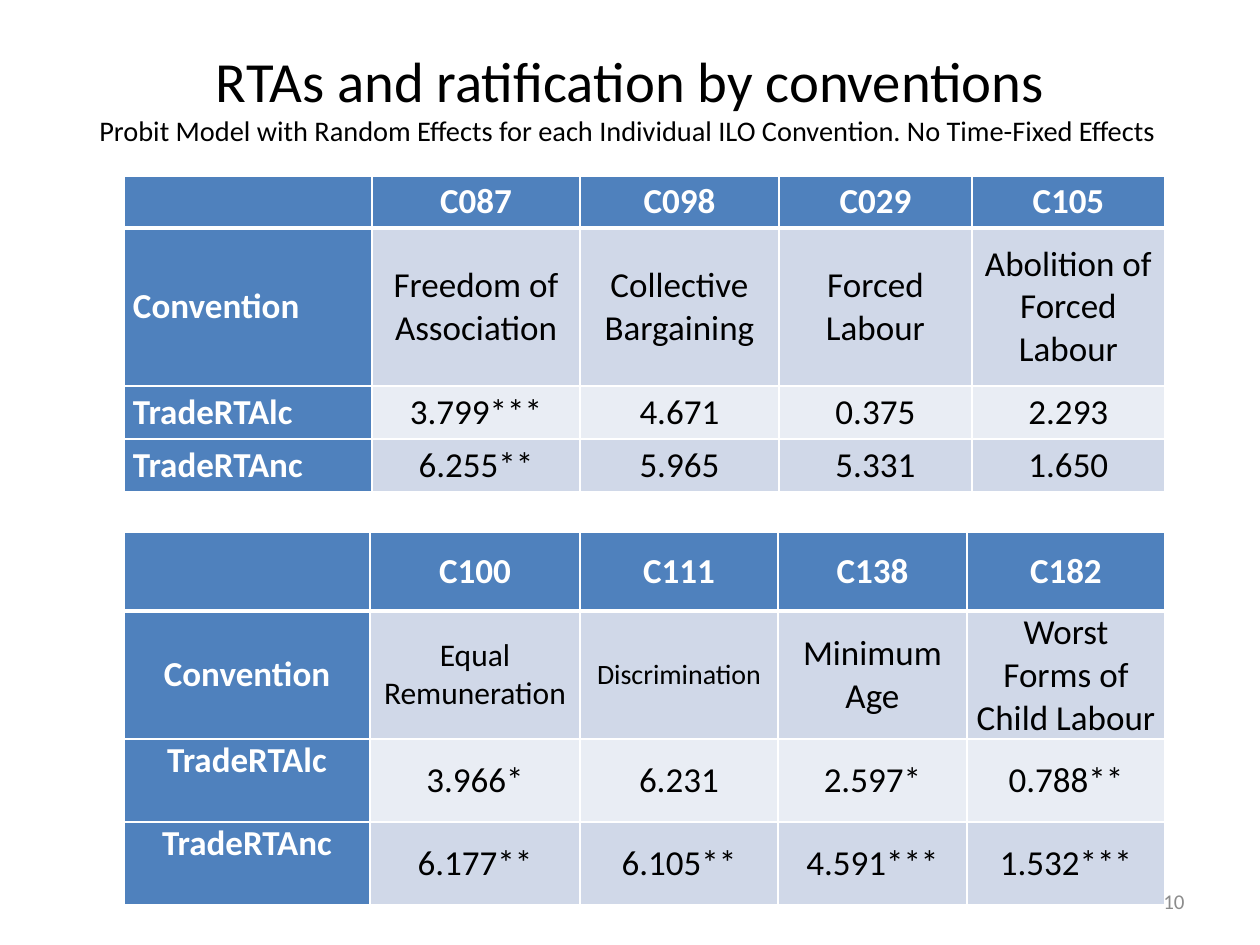
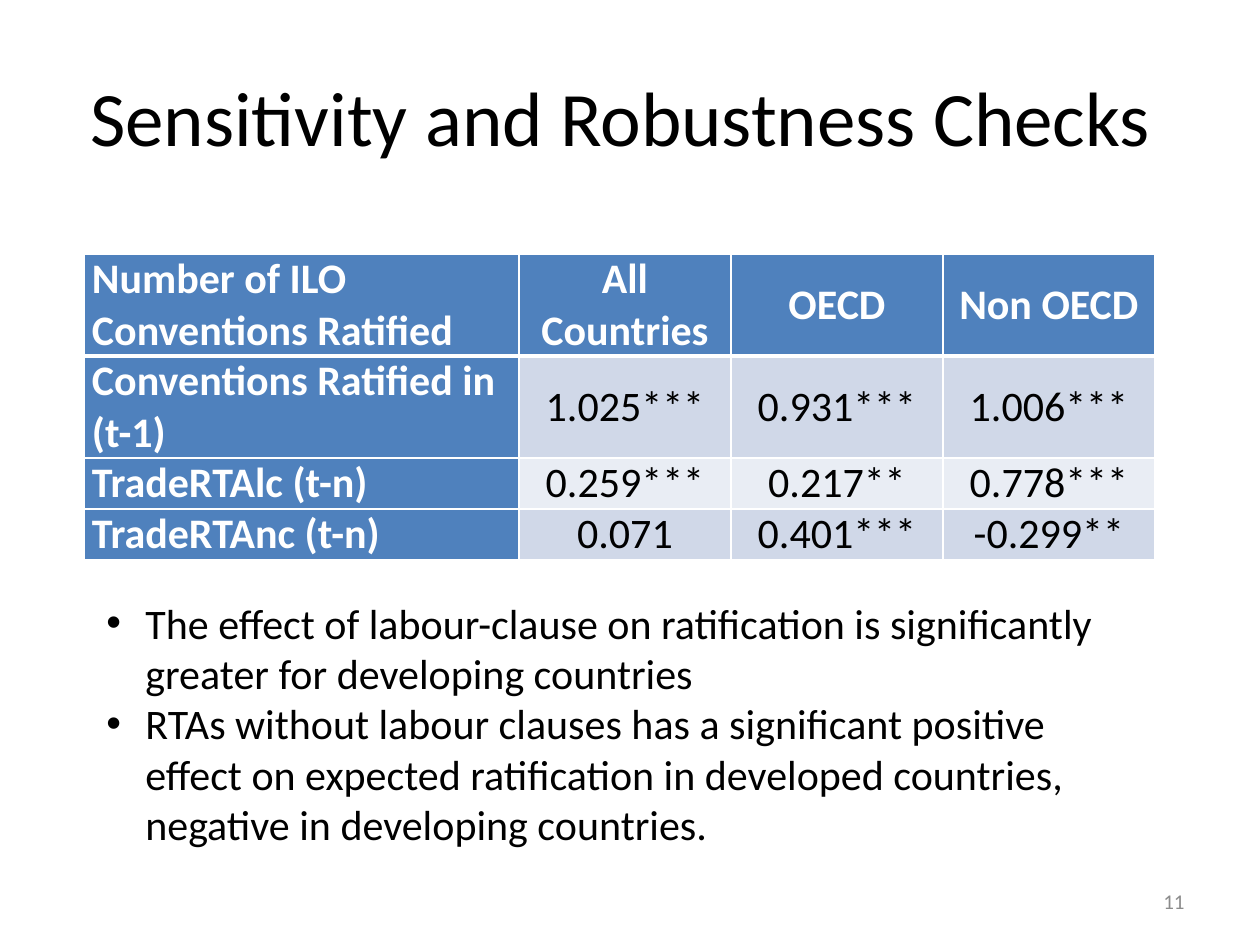
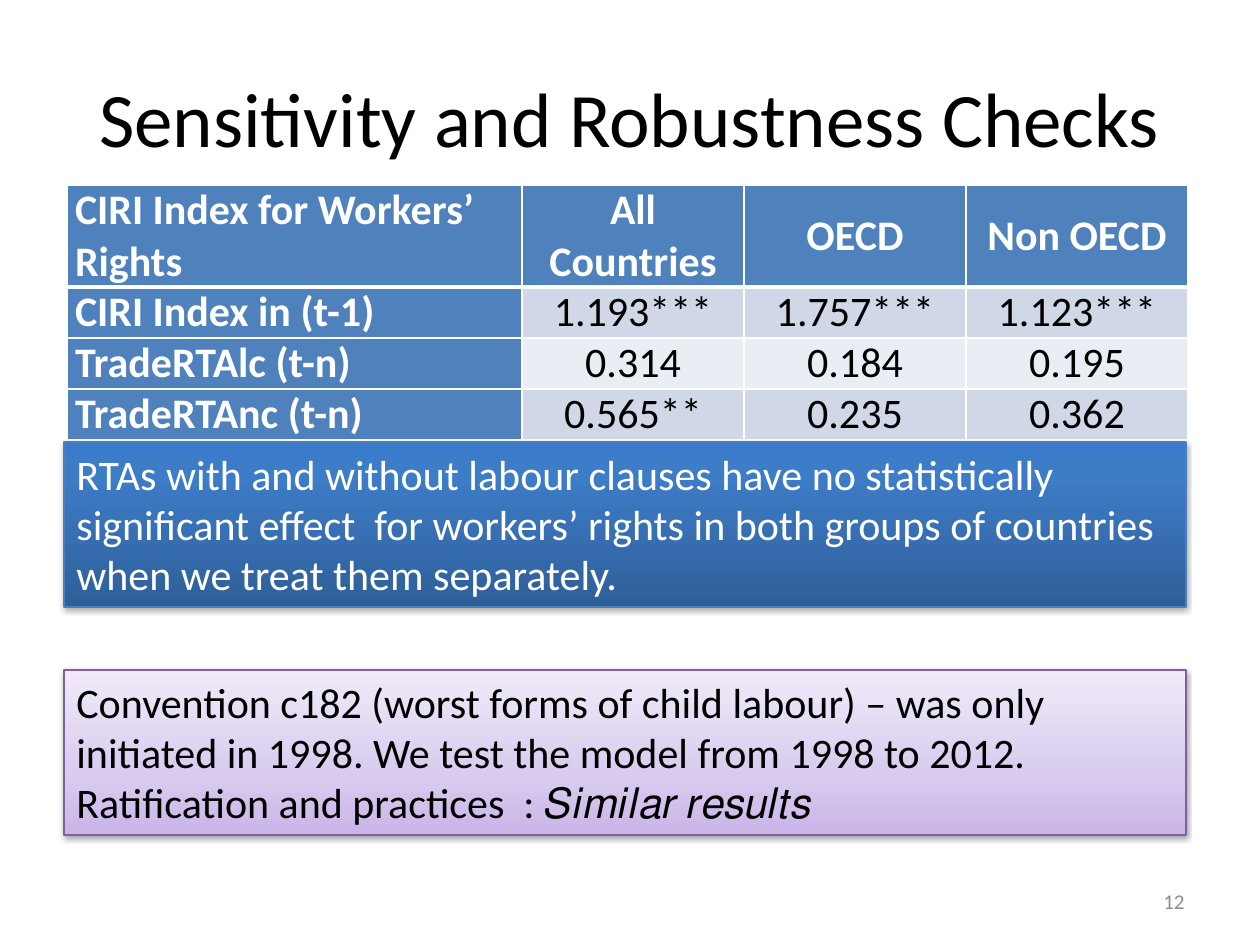
from lxml.etree import SubElement
from pptx import Presentation
from pptx.dml.color import RGBColor
from pptx.enum.shapes import MSO_SHAPE
from pptx.enum.text import MSO_ANCHOR as Anchor, MSO_AUTO_SIZE as AutoSize, PP_ALIGN as Align
from pptx.oxml.ns import qn
from pptx.util import Emu, Pt

FONT = "Calibri"
BLACK = RGBColor(0x00, 0x00, 0x00)
WHITE = RGBColor(0xFF, 0xFF, 0xFF)
GREY = RGBColor(0x8C, 0x8C, 0x8C)
BLUE = RGBColor(0x4F, 0x81, 0xBD)
BAND_DARK = RGBColor(0xD0, 0xD8, 0xE8)
BAND_LIGHT = RGBColor(0xE9, 0xED, 0xF4)
BLUE_EDGE = RGBColor(0x4B, 0x7E, 0xBC)
PURPLE_EDGE = RGBColor(0x7D, 0x60, 0xA0)
# Gradient stops run from the bottom edge to the top: percent, colour
BLUE_STOPS = [(0, RGBColor(0x2F, 0x5F, 0x99)), (80, RGBColor(0x3D, 0x7C, 0xC7)),
              (100, RGBColor(0x3A, 0x7C, 0xCB))]
PURPLE_STOPS = [(0, RGBColor(0xC9, 0xB5, 0xE8)), (35, RGBColor(0xD8, 0xCB, 0xEE)),
                (100, RGBColor(0xF0, 0xEA, 0xF9))]

# Content
CHECKS_TITLE = [("Sensitivity and Robustness Checks", 44)]
GROUPS = ["All Countries", "OECD", "Non OECD"]
SMALL_CELLS = {"Equal\nRemuneration": 18, "Discrimination": 16}

SLIDES = [
    {
        "title": [("RTAs and ratification by conventions", 32.4),
                  ("Probit Model with Random Effects for each Individual ILO Convention. "
                   "No Time-Fixed Effects ", 16.2)],
        "title_at": (63, 38, 1134, 117),
        "tables": [
            {"at": (124, 176), "columns": [248, 208, 199, 193, 193],
             "heights": [52, 158, 53, 53], "size": 20, "inset": 9,
             "rows": [
                 ["", "C087", "C098", "C029", "C105"],
                 ["Convention", "Freedom of Association", "Collective\nBargaining",
                  "Forced Labour", "Abolition of Forced Labour"],
                 ["TradeRTAlc", "3.799***", "4.671", "0.375", "2.293"],
                 ["TradeRTAnc", "6.255**", "5.965", "5.331", "1.650"]]},
            {"at": (124, 532), "columns": [246, 210, 198, 189, 198],
             "heights": [79, 128, 83, 83], "size": 20, "inset": 9,
             "label_align": Align.CENTER, "top_labels": ["TradeRTAlc", "TradeRTAnc"],
             "rows": [
                 ["", "C100", "C111", "C138", "C182"],
                 ["Convention", "Equal\nRemuneration", "Discrimination",
                  "Minimum Age", "Worst Forms of Child Labour"],
                 ["TradeRTAlc", "3.966*", "6.231", "2.597*", "0.788**"],
                 ["TradeRTAnc", "6.177**", "6.105**", "4.591***", "1.532***"]]},
        ],
        "number": "10",
    },
    {
        "title": CHECKS_TITLE,
        "title_at": (54, 37, 1134, 157),
        "tables": [
            {"at": (84, 254), "columns": [435, 212, 212, 212],
             "heights": [102, 102, 51, 51], "size": 24, "inset": 8,
             "rows": [
                 ["Number of ILO Conventions Ratified", *GROUPS],
                 ["Conventions Ratified in (t-1)", "1.025***", "0.931***", "1.006***"],
                 ["TradeRTAlc (t-n)", "0.259***", "0.217**", "0.778***"],
                 ["TradeRTAnc (t-n)", "0.071", "0.401***", "-0.299**"]]},
        ],
        "bullets_at": (94, 591, 1062, 267),
        "bullets": [
            "The effect of labour-clause on ratification is significantly greater "
            "for developing countries",
            "RTAs without labour clauses has a significant positive effect on expected "
            "ratification in developed countries, negative in developing countries."],
        "number": "11",
    },
    {
        "title": CHECKS_TITLE,
        "title_at": (63, 38, 1134, 157),
        "tables": [
            {"at": (67, 185), "columns": [455, 222, 222, 222],
             "heights": [102, 51, 51, 51], "size": 24, "inset": 8,
             "rows": [
                 ["CIRI Index for Workers’ Rights", *GROUPS],
                 ["CIRI Index in (t-1)", "1.193***", "1.757***", "1.123***"],
                 ["TradeRTAlc (t-n)", "0.314", "0.184", "0.195"],
                 ["TradeRTAnc (t-n)", "0.565**", "0.235", "0.362"]]},
        ],
        "panels": [
            {"at": (64, 442, 1122, 165), "stops": BLUE_STOPS, "edge": BLUE_EDGE,
             "color": WHITE, "alpha": 35,
             "lines": ["RTAs with and without labour clauses have no statistically significant "
                       "effect  for workers’ rights in both groups of countries when we treat "
                       "them separately."]},
            {"at": (64, 670, 1122, 165), "stops": PURPLE_STOPS, "edge": PURPLE_EDGE,
             "color": BLACK, "alpha": 38,
             "lines": ["Convention c182 (worst forms of child labour) – was only initiated in "
                       "1998. We test the model from 1998 to 2012.",
                       "Ratification and practices  : 𝑆𝑖𝑚𝑖𝑙𝑎𝑟 𝑟𝑒𝑠𝑢𝑙𝑡𝑠"]},
        ],
        "number": "12",
    },
]

PX_PER_INCH = 126


def px(length):
    return Emu(round(length * 914400 / PX_PER_INCH))


def add_span(para, text, size, color, bold=False):
    span = para.add_run()
    span.text = text
    span.font.name = FONT
    span.font.size = Pt(size)
    span.font.bold = bold
    span.font.color.rgb = color


def write_lines(frame, lines, size, color, align=Align.LEFT, bold=False):
    """Write one paragraph per line and return the paragraphs."""
    for index, line in enumerate(lines):
        para = frame.paragraphs[0] if index == 0 else frame.add_paragraph()
        para.alignment = align
        add_span(para, line, size, color, bold)
    return frame.paragraphs


def add_text_box(page, at, anchor):
    frame = page.shapes.add_textbox(*map(px, at)).text_frame
    frame.word_wrap = True
    frame.vertical_anchor = anchor
    return frame


def add_title(page, at, lines):
    para = add_text_box(page, at, Anchor.MIDDLE).paragraphs[0]
    para.alignment = Align.CENTER
    for index, (text, size) in enumerate(lines):
        if index:
            para.add_line_break()
        add_span(para, text, size, BLACK)


def set_borders(cell, row):
    """White rules, with a heavy one between the header and the body."""
    widths = {"L": 1, "R": 1, "T": 3 if row == 1 else 1, "B": 3 if row == 0 else 1}
    properties = cell._tc.get_or_add_tcPr()
    for place, (side, width) in enumerate(widths.items()):
        line = SubElement(properties, qn(f"a:ln{side}"), w=str(Pt(width)))
        color = SubElement(SubElement(line, qn("a:solidFill")), qn("a:srgbClr"))
        color.set("val", str(WHITE))
        properties.insert(place, line)


def add_data_table(page, data):
    rows, columns, heights = data["rows"], data["columns"], data["heights"]
    frame = page.shapes.add_table(len(rows), len(columns), *map(px, data["at"]),
                                  px(sum(columns)), px(sum(heights)))
    table = frame.table
    for column, width in zip(table.columns, columns):
        column.width = px(width)
    for row, (texts, height) in enumerate(zip(rows, heights)):
        table.rows[row].height = px(height)
        for column, text in enumerate(texts):
            cell = table.cell(row, column)
            heading = row == 0 or column == 0
            cell.fill.solid()
            cell.fill.fore_color.rgb = BLUE if heading else (BAND_LIGHT, BAND_DARK)[row % 2]
            set_borders(cell, row)
            cell.margin_left = cell.margin_right = px(data["inset"])
            cell.margin_top = cell.margin_bottom = 0
            on_top = text in data.get("top_labels", [])
            cell.vertical_anchor = Anchor.TOP if on_top else Anchor.MIDDLE
            if text:
                align = Align.CENTER if column else data.get("label_align", Align.LEFT)
                write_lines(cell.text_frame, text.split("\n"),
                            SMALL_CELLS.get(text, data["size"]),
                            WHITE if heading else BLACK, align, heading)


def add_bullets(page, at, lines):
    frame = add_text_box(page, at, Anchor.TOP)
    indent = px(39)
    for para in write_lines(frame, lines, 24, BLACK):
        properties = para._p.get_or_add_pPr()
        properties.set("marL", str(indent))
        properties.set("indent", str(-indent))
        SubElement(properties, qn("a:buFont"), typeface="Arial")
        SubElement(properties, qn("a:buChar"), char="•")


def add_panel(page, panel):
    box = page.shapes.add_shape(MSO_SHAPE.RECTANGLE, *map(px, panel["at"]))
    box.line.color.rgb = panel["edge"]
    box.line.width = Pt(0.75)

    # Vertical gradient
    box.fill.gradient()
    box.fill.gradient_angle = 90
    stops = box._element.spPr.find(qn("a:gradFill")).find(qn("a:gsLst"))
    for stop in list(stops):
        stops.remove(stop)
    for percent, color in panel["stops"]:
        stop = SubElement(stops, qn("a:gs"), pos=str(percent * 1000))
        SubElement(stop, qn("a:srgbClr"), val=str(color))

    # Soft shadow below
    box.shadow.inherit = False
    shadow = SubElement(box._element.spPr.find(qn("a:effectLst")), qn("a:outerShdw"),
                        blurRad=str(Pt(3.1)), dist=str(Pt(1.7)), dir="5400000",
                        rotWithShape="0")
    color = SubElement(shadow, qn("a:srgbClr"), val=str(BLACK))
    SubElement(color, qn("a:alpha"), val=str(panel["alpha"] * 1000))

    frame = box.text_frame
    frame.word_wrap = True
    frame.auto_size = AutoSize.SHAPE_TO_FIT_TEXT
    frame.vertical_anchor = Anchor.TOP
    write_lines(frame, panel["lines"], 24, panel["color"])


def add_page_number(page, number):
    frame = add_text_box(page, (903, 876, 294, 50), Anchor.MIDDLE)
    write_lines(frame, [number], 12, GREY, Align.RIGHT)


def main():
    deck = Presentation()
    deck.slide_width, deck.slide_height = px(1260), px(945)
    for content in SLIDES:
        page = deck.slides.add_slide(deck.slide_layouts[6])
        add_title(page, content["title_at"], content["title"])
        for data in content["tables"]:
            add_data_table(page, data)
        if "bullets" in content:
            add_bullets(page, content["bullets_at"], content["bullets"])
        for panel in content.get("panels", []):
            add_panel(page, panel)
        add_page_number(page, content["number"])
    deck.save("out.pptx")


if __name__ == "__main__":
    main()
